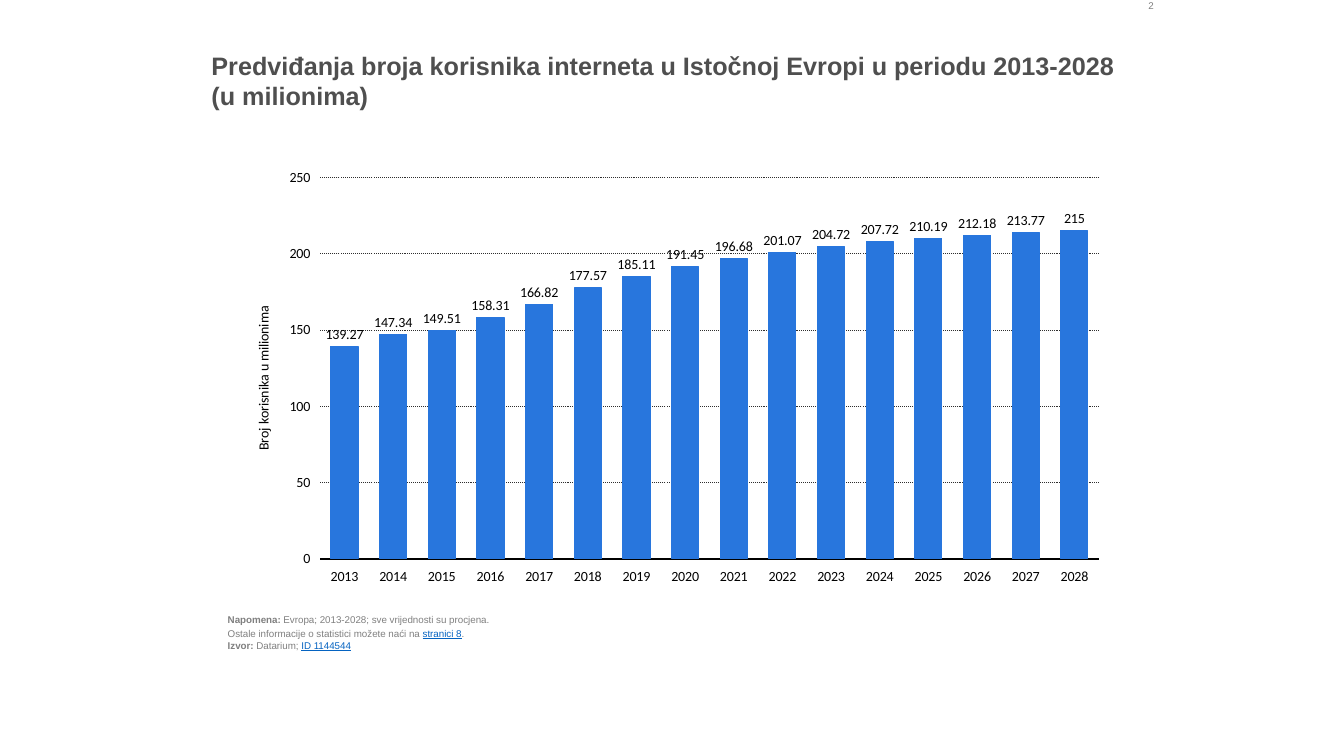
"""Build the slide forecasting internet users in Eastern Europe, 2013-2028."""
from dataclasses import dataclass

from pptx import Presentation
from pptx import util as u
from pptx.chart import axis as ax
from pptx.chart import data as cd
from pptx.dml.color import RGBColor
from pptx.enum import chart as ch
from pptx.enum import dml, text
from pptx.oxml import parse_xml
from pptx.oxml.ns import nsdecls

COLORS = {"title": "4F4F4F", "note": "808080", "link": "0563C1",
          "bar": "2876DD", "grid": "2F2F2F", "axis": "000000"}
FIRST_YEAR = 2013
USERS = (139.27, 147.34, 149.51, 158.31, 166.82, 177.57, 185.11, 191.45,
         196.68, 201.07, 204.72, 207.72, 210.19, 212.18, 213.77, 215)


@dataclass(frozen=True)
class Piece:
    words: str
    bold: bool = False
    link: bool = False


@dataclass(frozen=True)
class Box:
    left: float
    top: float
    width: float
    height: float

    def lengths(self) -> tuple:
        return tuple(u.Cm(n) for n in (self.left, self.top, self.width, self.height))


@dataclass(frozen=True)
class Passage:
    box: Box
    lines: tuple
    size: float
    color: str
    align: text.PP_ALIGN = text.PP_ALIGN.LEFT
    anchor: text.MSO_ANCHOR = text.MSO_ANCHOR.TOP


PASSAGES = (
    Passage(Box(5.33, 1.27, 22.81, 2.39),
            ((Piece("Predviđanja broja korisnika interneta u Istočnoj Evropi "
                    "u periodu 2013-2028 (u milionima)", bold=True),),),
            18, "title"),
    Passage(Box(5.74, 14.94, 22.4, 1.47),
            ((Piece("Napomena:", bold=True),
              Piece(" Evropa; 2013-2028; sve vrijednosti su procjena.")),
             (Piece("Ostale informacije o statistici možete naći na "),
              Piece("stranici 8", link=True), Piece(".")),
             (Piece("Izvor: ", bold=True), Piece("Datarium; "),
              Piece("ID 1144544", link=True))),
            7, "note", anchor=text.MSO_ANCHOR.BOTTOM),
    Passage(Box(27.86, 0, 1.22, 0.56), ((Piece("2"),),), 7, "note",
            align=text.PP_ALIGN.RIGHT),
)
CHART_BOX = Box(5.74, 4.06, 22.4, 10.9)


def rgb(name: str) -> RGBColor:
    return RGBColor.from_string(COLORS[name])


def add_passage(slide, passage: Passage) -> None:
    frame = slide.shapes.add_textbox(*passage.box.lengths()).text_frame
    frame.word_wrap = True
    frame.vertical_anchor = passage.anchor
    frame.margin_left = frame.margin_right = frame.margin_top = frame.margin_bottom = 0
    for index, line in enumerate(passage.lines):
        paragraph = frame.add_paragraph() if index else frame.paragraphs[0]
        paragraph.alignment = passage.align
        paragraph.font.name = "Arial"
        paragraph.font.size = u.Pt(passage.size)
        if index == 0:
            paragraph.space_after = u.Pt(passage.size * 0.2)
        for piece in line:
            run = paragraph.add_run()
            run.text = piece.words
            run.font.bold = piece.bold
            run.font.underline = piece.link
            run.font.color.rgb = rgb("link" if piece.link else passage.color)


def style_font(font, size: float = 10) -> None:
    font.name = "Calibri"
    font.size = u.Pt(size)
    font.bold = False
    font.color.rgb = rgb("axis")


def style_axis(axis: ax._BaseAxis) -> None:
    axis.major_tick_mark = axis.minor_tick_mark = ch.XL_TICK_MARK.NONE
    axis.tick_label_position = ch.XL_TICK_LABEL_POSITION.LOW
    style_font(axis.tick_labels.font)


def layout_xml(target: str, **fractions: float):
    inner = '<c:layoutTarget val="inner"/>' if target == "plot" else ""
    modes = "".join(f'<c:{key}Mode val="edge"/>' for key in ("x", "y"))
    values = "".join(f'<c:{key} val="{value}"/>' for key, value in fractions.items())
    return parse_xml(f'<c:layout {nsdecls("c")}><c:manualLayout>{inner}{modes}{values}'
                     '</c:manualLayout></c:layout>')


def place_parts(chart) -> None:
    root = chart._chartSpace
    for layout in root.xpath(".//c:plotArea/c:layout | .//c:valAx/c:title/c:layout"):
        layout.getparent().remove(layout)
    root.xpath(".//c:plotArea")[0].insert(0, layout_xml("plot", x=0.104, y=0.038, w=0.876, h=0.882))
    root.xpath(".//c:valAx/c:title/c:tx")[0].addnext(layout_xml("title", x=0.027, y=0.33))


def add_users_chart(slide) -> None:
    users = cd.CategoryChartData()
    users.categories = [str(FIRST_YEAR + n) for n in range(len(USERS))]
    users.add_series("Series 1", USERS)
    chart = slide.shapes.add_chart(ch.XL_CHART_TYPE.COLUMN_CLUSTERED,
                                   *CHART_BOX.lengths(), users).chart
    chart.has_legend = chart.has_title = False
    style_font(chart.font, 18)

    years, millions = chart.category_axis, chart.value_axis
    style_axis(years)
    years.format.line.color.rgb = rgb("axis")
    years.format.line.width = u.Pt(2)
    style_axis(millions)
    millions.format.line.fill.background()
    millions.minimum_scale, millions.maximum_scale, millions.major_unit = 0, 250, 50
    millions.tick_labels.number_format = "#,##0"
    millions.tick_labels.number_format_is_linked = False
    grid = millions.major_gridlines.format.line
    grid.color.rgb = rgb("grid")
    grid.width = u.Pt(0.75)
    grid.dash_style = dml.MSO_LINE.ROUND_DOT
    caption = millions.axis_title.text_frame.paragraphs[0]
    caption.add_run().text = "Broj korisnika u milionima"
    style_font(caption.font)

    plot = chart.plots[0]
    plot.gap_width, plot.overlap = 80, -30
    plot.vary_by_categories = False
    bars = plot.series[0]
    bars.format.fill.solid()
    bars.format.fill.fore_color.rgb = rgb("bar")
    bars.format.line.color.rgb = rgb("bar")
    bars.format.line.width = u.Pt(0.75)
    bars.data_labels.show_value = True
    bars.data_labels.position = ch.XL_LABEL_POSITION.OUTSIDE_END
    style_font(bars.data_labels.font)
    place_parts(chart)


def main() -> None:
    deck = Presentation()
    deck.slide_width, deck.slide_height = u.Cm(33.87), u.Cm(19.05)
    slide = deck.slides.add_slide(deck.slide_layouts[6])
    for passage in PASSAGES:
        add_passage(slide, passage)
    add_users_chart(slide)
    deck.save("out.pptx")


if __name__ == "__main__":
    main()
